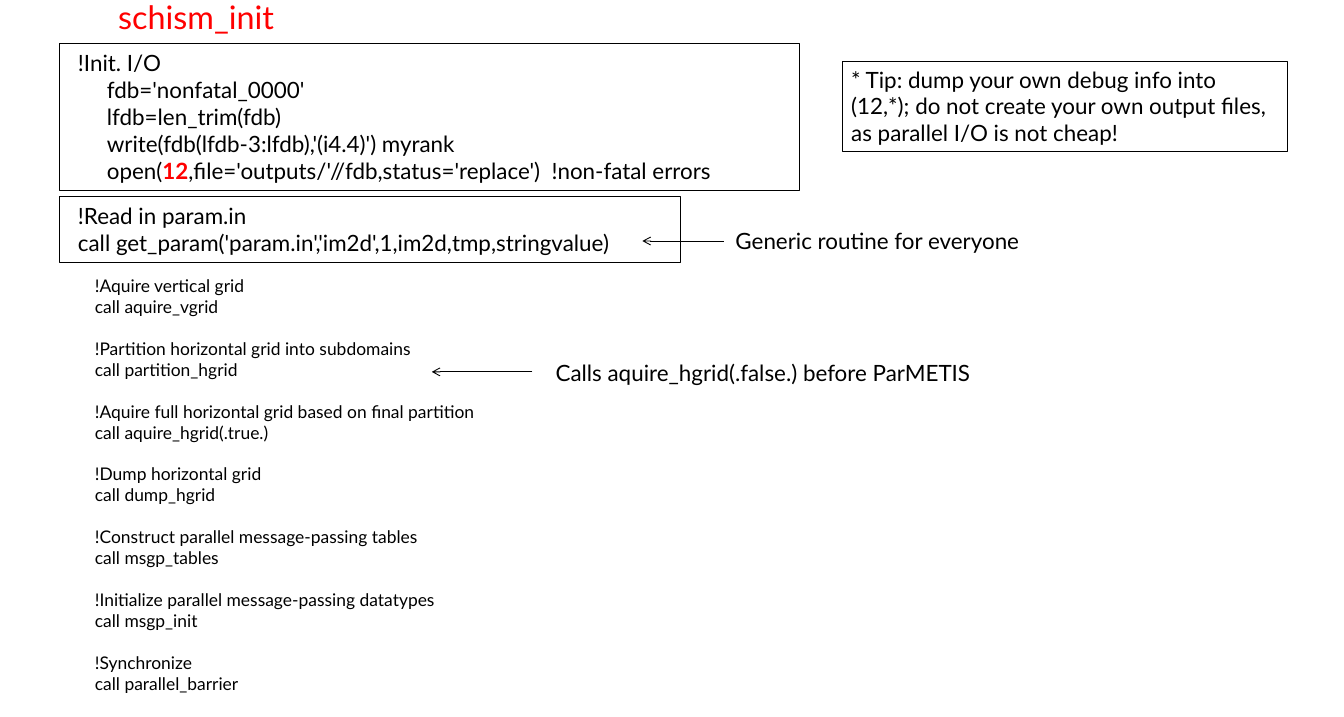
from dataclasses import dataclass

import lxml.etree
import pptx
import pptx.dml.color
import pptx.enum.shapes
import pptx.enum.text
import pptx.oxml.ns
import pptx.util

Cm = pptx.util.Cm
Pt = pptx.util.Pt
Anchor = pptx.enum.text.MSO_ANCHOR


@dataclass(frozen=True)
class Theme:
    font: str = "Lato"
    ink: pptx.dml.color.RGBColor = pptx.dml.color.RGBColor(0, 0, 0)
    accent: pptx.dml.color.RGBColor = pptx.dml.color.RGBColor(255, 0, 0)
    title_size: int = 26
    main_size: int = 18
    step_size: int = 14
    line_width: float = 0.75
    wide_inset: tuple = (0.33, 0.18)
    tip_inset: tuple = (0.25, 0.13)


THEME = Theme()
COMMENT_INDENT = 0.18
CODE_INDENT = 1.0
STEP_INDENT = 0.76

INIT_CODE = [
    "fdb='nonfatal_0000'",
    "lfdb=len_trim(fdb)",
    "write(fdb(lfdb-3:lfdb),'(i4.4)') myrank",
]
STEPS = [
    ("!Aquire vertical grid", "call aquire_vgrid"),
    ("!Partition horizontal grid into subdomains", "call partition_hgrid"),
    ("!Aquire full horizontal grid based on final partition", "call aquire_hgrid(.true.)"),
    ("!Dump horizontal grid", "call dump_hgrid"),
    ("!Construct parallel message-passing tables", "call msgp_tables"),
    ("!Initialize parallel message-passing datatypes", "call msgp_init"),
    ("!Synchronize", "call parallel_barrier"),
]


def apply_format(target, values):
    for name, value in values.items():
        setattr(target, name, value)


def set_up_frame(box, inset=THEME.wide_inset, wrap=True, anchor=Anchor.TOP):
    across, down = map(Cm, inset)
    apply_format(box.text_frame, {
        "margin_left": across, "margin_right": across,
        "margin_top": down, "margin_bottom": down,
        "word_wrap": wrap, "vertical_anchor": anchor,
    })


def add_text_box(page, place, **frame):
    box = page.shapes.add_textbox(*map(Cm, place))
    set_up_frame(box, **frame)
    return box


def add_outlined_box(page, place, **frame):
    box = page.shapes.add_shape(pptx.enum.shapes.MSO_SHAPE.RECTANGLE, *map(Cm, place))
    box.shadow.inherit = False
    box.fill.background()
    box.line.color.rgb = THEME.ink
    box.line.width = Pt(THEME.line_width)
    set_up_frame(box, **frame)
    return box


def add_span(para, text, size=THEME.main_size, color=THEME.ink, bold=False):
    span = para.add_run()
    span.text = text
    apply_format(span.font, {"name": THEME.font, "size": Pt(size), "bold": bold})
    span.font.color.rgb = color


def add_line(box, text="", indent=0, space_before=0, **style):
    """Fill the empty first paragraph of the box, or append a new one."""
    frame = box.text_frame
    para = frame.paragraphs[0]
    if para.runs:
        para = frame.add_paragraph()
    apply_format(para, {
        "alignment": pptx.enum.text.PP_ALIGN.LEFT,
        "space_before": Pt(space_before),
    })
    para._p.get_or_add_pPr().set("marL", str(Cm(indent)))
    if text:
        add_span(para, text, **style)
    return para


def add_left_arrow(page, start, end, height):
    arrow = page.shapes.add_connector(
        pptx.enum.shapes.MSO_CONNECTOR.STRAIGHT,
        Cm(start), Cm(height), Cm(end), Cm(height))
    arrow.line.color.rgb = THEME.ink
    arrow.line.width = Pt(THEME.line_width)
    qn = pptx.oxml.ns.qn
    lxml.etree.SubElement(arrow.line._get_or_add_ln(), qn("a:tailEnd"), type="arrow")
    lxml.etree.SubElement(arrow._element.spPr, qn("a:effectLst"))


def add_init_code(page):
    box = add_outlined_box(page, (1.7, 1.22, 20.96, 4.19))
    add_line(box, "!Init. I/O", COMMENT_INDENT)
    for code in INIT_CODE:
        add_line(box, code, CODE_INDENT)
    para = add_line(box, "open(", CODE_INDENT)
    add_span(para, "12", color=THEME.accent, bold=True)
    add_span(para, ",file='outputs/'//fdb,status='replace')  !non-fatal errors")


def add_param_code(page):
    box = add_outlined_box(page, (1.7, 5.56, 17.58, 1.88))
    add_line(box, "!Read in param.in", COMMENT_INDENT)
    add_line(box, "call get_param('param.in','im2d',1,im2d,tmp,stringvalue)", COMMENT_INDENT)


def add_steps(page):
    """List each comment with its call, one line of space between the pairs."""
    box = add_text_box(page, (1.6, 7.62, 28.58, 12.6))
    gap = 1.2 * THEME.step_size
    for number, (comment, call) in enumerate(STEPS):
        add_line(box, comment, STEP_INDENT, gap if number else 0, size=THEME.step_size)
        add_line(box, call, STEP_INDENT, size=THEME.step_size)


def add_note(page, place, text):
    add_line(add_text_box(page, place, wrap=False), text)


def main():
    deck = pptx.Presentation()
    apply_format(deck, {"slide_width": Cm(38.1), "slide_height": Cm(20.32)})
    page = deck.slides.add_slide(deck.slide_layouts[6])

    title = add_text_box(page, (3.02, 0.28, 28.91, 0.91), anchor=Anchor.BOTTOM)
    add_line(title, "schism_init", size=THEME.title_size, color=THEME.accent)

    add_init_code(page)
    add_param_code(page)
    add_steps(page)

    add_note(page, (20.52, 6.27, 8.76, 1.12), "Generic routine for everyone")
    add_left_arrow(page, 20.52, 18.21, 6.83)
    add_note(page, (15.42, 10.01, 12.83, 1.12), "Calls aquire_hgrid(.false.) before ParMETIS")
    add_left_arrow(page, 15.09, 12.24, 10.54)

    tip = add_outlined_box(page, (23.88, 1.73, 12.62, 2.57), inset=THEME.tip_inset)
    add_line(tip, "* Tip: dump your own debug info into (12,*); do not create "
                  "your own output files, as parallel I/O is not cheap!")

    deck.save("out.pptx")


if __name__ == "__main__":
    main()
